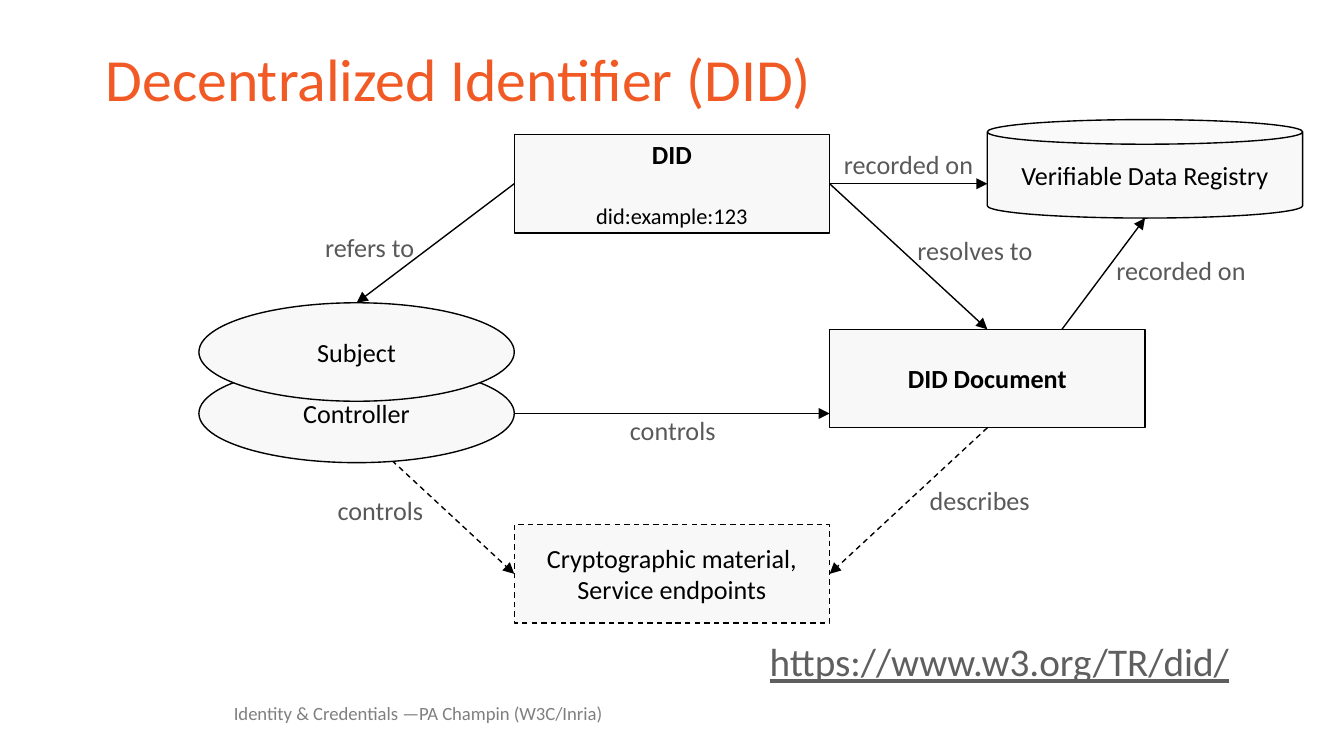
from dataclasses import dataclass
from lxml.etree import SubElement
from pptx import Presentation
from pptx.dml.color import RGBColor
from pptx.enum.dml import MSO_LINE
from pptx.enum.shapes import MSO_CONNECTOR, MSO_SHAPE
from pptx.enum.text import MSO_ANCHOR, PP_ALIGN
from pptx.oxml.ns import qn
from pptx.util import Cm, Pt


@dataclass(frozen=True)
class Theme:
    font: str = "Calibri"
    title: str = "F15A24"
    ink: str = "000000"
    label: str = "595959"
    link: str = "5F5F5F"
    foot: str = "7F7F7F"
    fill: str = "F8F8F8"
    head_size: float = 32
    link_size: float = 21
    body_size: float = 14
    code_size: float = 12
    foot_size: float = 10
    stroke: float = 0.75


LEFT, CENTER, RIGHT = PP_ALIGN.LEFT, PP_ALIGN.CENTER, PP_ALIGN.RIGHT
TOP, WEST, BOTTOM, EAST = range(4)
WIDE, HIGH = 5.96, 1.86
COLS = [3.76 + WIDE * i for i in range(3)]
MIDS = [x + WIDE / 2 for x in COLS]


class Canvas:
    def __init__(self, slide, theme):
        self.slide = slide
        self.theme = theme

    def run(self, para, text, size, color, bold=False, under=False):
        run = para.add_run()
        run.text = text
        font = run.font
        font.name = self.theme.font
        font.size = Pt(size)
        font.bold = bold
        font.underline = under
        font.color.rgb = RGBColor.from_string(color)

    def frame(self, shape, anchor, pad_x, pad_y):
        frame = shape.text_frame
        frame.word_wrap = True
        frame.vertical_anchor = anchor
        frame.margin_left = frame.margin_right = Cm(pad_x)
        frame.margin_top = frame.margin_bottom = Cm(pad_y)
        return frame

    def text(self, box, text, size, color, align=LEFT, anchor=MSO_ANCHOR.MIDDLE,
             pad=(0.25, 0.13), space=0.9, under=False):
        shape = self.slide.shapes.add_textbox(*map(Cm, box))
        para = self.frame(shape, anchor, *pad).paragraphs[0]
        para.alignment = align
        para.line_spacing = space
        self.run(para, text, size, color, under=under)

    def label(self, x, y, width, text, align=LEFT):
        self.text((x, y, width, 1.12), text, self.theme.body_size,
                  self.theme.label, align, pad=(0.25, 0.25), space=1.0)

    def stroke(self, line, dash):
        line.color.rgb = RGBColor.from_string(self.theme.ink)
        line.width = Pt(self.theme.stroke)
        if dash:
            line.dash_style = MSO_LINE.DASH

    def node(self, x, y, *rows, kind=MSO_SHAPE.RECTANGLE, bold=False, dash=False):
        shape = self.slide.shapes.add_shape(kind, Cm(x), Cm(y), Cm(WIDE), Cm(HIGH))
        shape.shadow.inherit = False
        shape.fill.solid()
        shape.fill.fore_color.rgb = RGBColor.from_string(self.theme.fill)
        self.stroke(shape.line, dash)
        frame = self.frame(shape, MSO_ANCHOR.MIDDLE, 0.25, 0.25)
        for i, row in enumerate(rows):
            para = frame.add_paragraph() if i else frame.paragraphs[0]
            para.alignment = CENTER
            self.run(para, row, self.theme.body_size, self.theme.ink, bold)
        return shape

    def arrow(self, start, end, begin=None, finish=None, dash=False):
        line = self.slide.shapes.add_connector(
            MSO_CONNECTOR.STRAIGHT, *map(Cm, (*start, *end)))
        if begin:
            line.begin_connect(*begin)
        if finish:
            line.end_connect(*finish)
        self.stroke(line.line, dash)
        props = line._element.spPr
        SubElement(props.find(qn("a:ln")), qn("a:tailEnd"), type="triangle")
        SubElement(props, qn("a:effectLst"))


def main():
    deck = Presentation()
    deck.slide_width, deck.slide_height = Cm(25.4), Cm(14.28)
    theme = Theme()
    art = Canvas(deck.slides.add_slide(deck.slide_layouts[6]), theme)

    art.text((1.75, 0.76, 21.9, 1.6), "Decentralized Identifier (DID)",
             theme.head_size, theme.title)
    art.text((4.42, 13.23, 7.7, 0.46), "Identity & Credentials —PA Champin (W3C/Inria)",
             theme.foot_size, theme.foot, anchor=MSO_ANCHOR.BOTTOM, pad=(0, 0))
    art.text((1.75, 11.84, 21.73, 1.22), "https://www.w3.org/TR/did/",
             theme.link_size, theme.link, RIGHT, MSO_ANCHOR.BOTTOM,
             space=0.8, under=True)

    did_y, doc_y, key_y, sub_y, ctl_y, reg_y = 2.54, 6.22, 9.91, 5.72, 6.88, 2.26
    did_mid, key_mid, ctl_mid = (y + HIGH / 2 for y in (did_y, key_y, ctl_y))

    did = art.node(COLS[1], did_y, "DID", bold=True)
    code = did.text_frame.add_paragraph()
    code.alignment = CENTER
    code.space_before = Pt(17)
    art.run(code, "did:example:123", theme.code_size, theme.ink)
    doc = art.node(COLS[2], doc_y, "DID Document", bold=True)
    key = art.node(COLS[1], key_y, "Cryptographic material,", "Service endpoints",
                   dash=True)

    art.arrow((COLS[1], did_mid), (MIDS[0], sub_y), begin=(did, WEST))
    art.arrow((COLS[2], did_mid), (MIDS[2], doc_y), (did, EAST), (doc, TOP))
    art.arrow((MIDS[2], doc_y + HIGH), (COLS[2], key_mid),
              (doc, BOTTOM), (key, EAST), dash=True)
    art.arrow((MIDS[0], doc_y + HIGH), (COLS[1], key_mid),
              finish=(key, WEST), dash=True)

    art.node(COLS[0], ctl_y, "Controller", kind=MSO_SHAPE.OVAL)
    art.node(COLS[0], sub_y, "Subject", kind=MSO_SHAPE.OVAL)
    store = art.node(MIDS[2], reg_y, "Verifiable Data Registry", kind=MSO_SHAPE.CAN)
    store.adjustments[0] = 0.25

    art.arrow((COLS[2], did_mid), (MIDS[2], did_mid), begin=(did, EAST))
    art.arrow((20.07, doc_y), (MIDS[2] + WIDE / 2, reg_y + HIGH))
    art.arrow((COLS[1], ctl_mid), (COLS[2], ctl_mid))

    art.label(5.41, 4.11, 2.67, "refers to", RIGHT)
    art.label(17.32, 8.89, 2.97, "describes")
    art.label(17.09, 4.17, 3.02, "resolves to")
    art.label(5.23, 9.07, 3.02, "controls", RIGHT)
    art.label(15.7, 2.54, 3.02, "recorded on")
    art.label(20.85, 4.55, 3.02, "recorded on")
    art.label(11.56, 7.57, 2.31, "controls", CENTER)

    deck.save("out.pptx")


if __name__ == "__main__":
    main()
